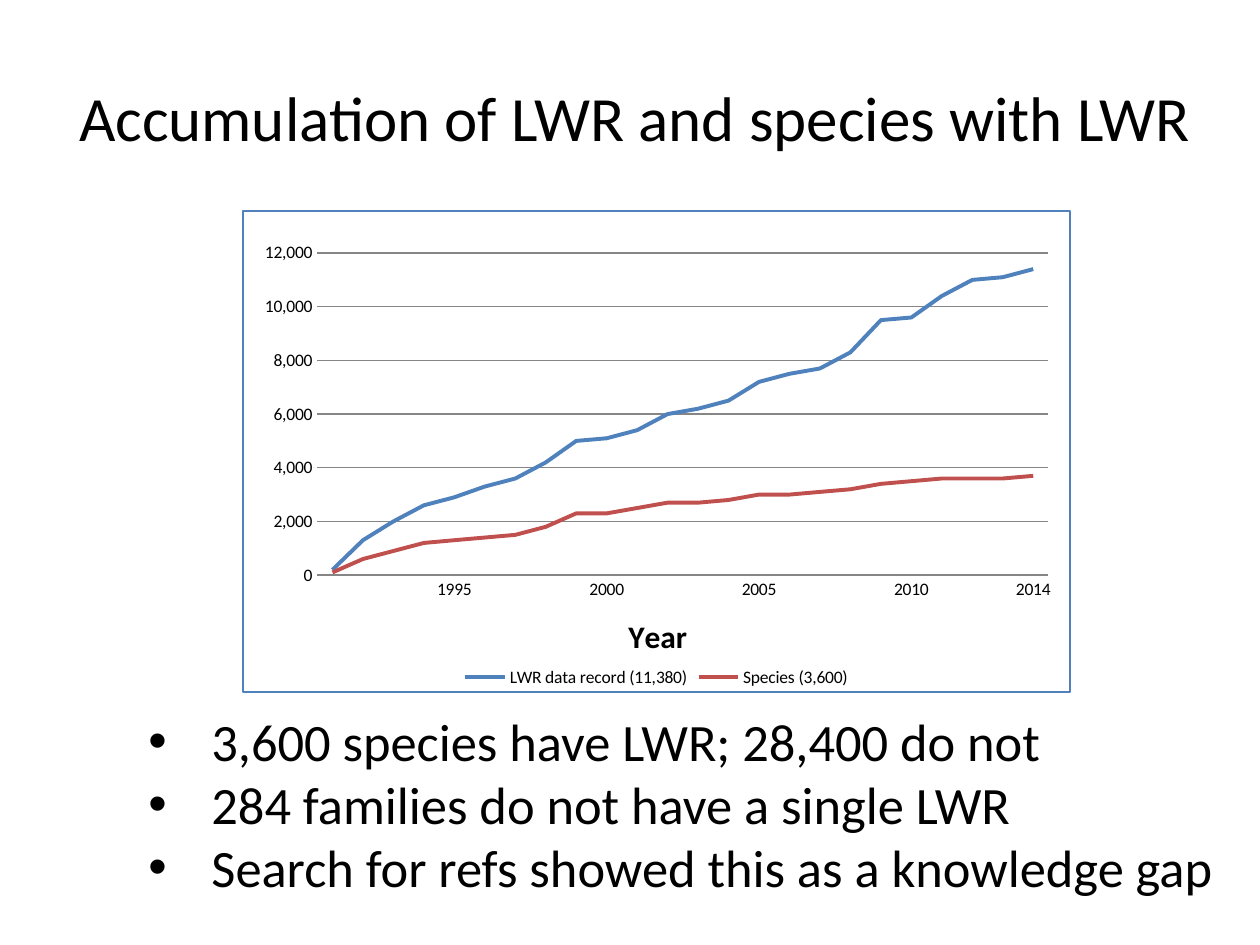
"""Build a slide charting the accumulation of LWR records and species."""
from dataclasses import dataclass

import lxml.etree
import pptx
import pptx.chart.data
import pptx.dml.color
import pptx.enum.chart
import pptx.enum.text
import pptx.oxml
import pptx.oxml.ns
import pptx.util
from pptx.util import Inches

FONT = "Calibri"
COLORS = {
    "text": "000000",
    "background": "FFFFFF",
    "records": "4F81BD",
    "species": "C0504D",
    "grid": "868686",
}
FIRST_YEAR, LAST_YEAR = 1991, 2014
PLOT_LAYOUT = {"x": 0.09, "y": 0.087, "w": 0.884, "h": 0.67}


@dataclass
class Box:
    left: float
    top: float
    width: float
    height: float

    def lengths(self) -> tuple:
        return tuple(Inches(n) for n in (self.left, self.top, self.width, self.height))


@dataclass
class Series:
    name: str
    color: str
    values: list[int]


SERIES = [
    Series("LWR data record (11,380)", "records",
           [200, 1300, 2000, 2600, 2900, 3300, 3600, 4200, 5000, 5100, 5400, 6000,
            6200, 6500, 7200, 7500, 7700, 8300, 9500, 9600, 10400, 11000, 11100, 11400]),
    Series("Species (3,600)", "species",
           [100, 600, 900, 1200, 1300, 1400, 1500, 1800, 2300, 2300, 2500, 2700,
            2700, 2800, 3000, 3000, 3100, 3200, 3400, 3500, 3600, 3600, 3600, 3700]),
]
FINDINGS = [
    "3,600 species have LWR; 28,400 do not",
    "284 families do not have a single LWR",
    "Search for refs showed this as a knowledge gap",
]


def rgb(name: str) -> pptx.dml.color.RGBColor:
    return pptx.dml.color.RGBColor.from_string(COLORS[name])


def style_font(font, size: float, bold: bool = False) -> None:
    font.name, font.size, font.bold = FONT, pptx.util.Pt(size), bold
    font.color.rgb = rgb("text")


def style_line(line, color: str, width: float) -> None:
    line.color.rgb = rgb(color)
    line.width = pptx.util.Pt(width)


def add_text(slide, box: Box, lines: list[str], size: float, wrap: bool):
    frame = slide.shapes.add_textbox(*box.lengths()).text_frame
    frame.word_wrap = wrap
    frame.text = "\n".join(lines)
    for paragraph in frame.paragraphs:
        style_font(paragraph.font, size)
    return frame


def add_bullet(paragraph) -> None:
    properties = paragraph._p.get_or_add_pPr()
    properties.set("marL", str(Inches(0.5)))
    properties.set("indent", str(Inches(-0.5)))
    namespace = pptx.oxml.ns.qn
    lxml.etree.SubElement(properties, namespace("a:buFont")).set("typeface", "Arial")
    lxml.etree.SubElement(properties, namespace("a:buChar")).set("char", "•")
    defaults = properties.find(namespace("a:defRPr"))
    if defaults is not None:
        properties.append(defaults)


def set_plot_layout(chart) -> None:
    plot_area = chart._chartSpace.chart.plotArea
    for layout in plot_area.findall(pptx.oxml.ns.qn("c:layout")):
        plot_area.remove(layout)
    modes = '<c:xMode val="edge"/><c:yMode val="edge"/>'
    sizes = "".join(f'<c:{key} val="{value}"/>' for key, value in PLOT_LAYOUT.items())
    plot_area.insert(0, pptx.oxml.parse_xml(
        f'<c:layout {pptx.oxml.ns.nsdecls("c")}><c:manualLayout>'
        f'<c:layoutTarget val="inner"/>{modes}{sizes}</c:manualLayout></c:layout>'))


def set_chart_border(chart) -> None:
    chart._chartSpace.chart.addnext(pptx.oxml.parse_xml(
        f'<c:spPr {pptx.oxml.ns.nsdecls("c", "a")}>'
        f'<a:solidFill><a:srgbClr val="{COLORS["background"]}"/></a:solidFill>'
        f'<a:ln w="{pptx.util.Pt(1)}"><a:solidFill>'
        f'<a:srgbClr val="{COLORS["records"]}"/></a:solidFill></a:ln></c:spPr>'))


def style_axes(chart) -> None:
    no_tick = pptx.enum.chart.XL_TICK_MARK.NONE
    for axis in (chart.category_axis, chart.value_axis):
        axis.major_tick_mark = axis.minor_tick_mark = no_tick
        style_font(axis.tick_labels.font, 10)
    years, counts = chart.category_axis, chart.value_axis
    style_line(years.format.line, "grid", 0.75)
    years.axis_title.text_frame.text = "Year"
    style_font(years.axis_title.text_frame.paragraphs[0].font, 18, bold=True)
    skip = pptx.oxml.parse_xml(
        f'<c:tickLblSkip {pptx.oxml.ns.nsdecls("c")} val="1"/>')
    years._element.find(pptx.oxml.ns.qn("c:noMultiLvlLbl")).addprevious(skip)
    counts.minimum_scale, counts.maximum_scale, counts.major_unit = 0, 12000, 2000
    counts.tick_labels.number_format = "#,##0"
    counts.tick_labels.number_format_is_linked = False
    counts.format.line.fill.background()
    style_line(counts.major_gridlines.format.line, "grid", 0.75)


def add_line_chart(slide, box: Box, series_list: list[Series]) -> None:
    data = pptx.chart.data.CategoryChartData(number_format="#,##0")
    data.categories = [
        str(year) if year % 5 == 0 or year == LAST_YEAR else ""
        for year in range(FIRST_YEAR, LAST_YEAR + 1)
    ]
    for series in series_list:
        data.add_series(series.name, series.values)
    chart = slide.shapes.add_chart(
        pptx.enum.chart.XL_CHART_TYPE.LINE, *box.lengths(), data).chart
    style_font(chart.font, 10)
    chart.has_title = False
    chart.has_legend = True
    chart.legend.position = pptx.enum.chart.XL_LEGEND_POSITION.BOTTOM
    chart.legend.include_in_layout = False
    style_font(chart.legend.font, 10)
    chart.plots[0].vary_by_categories = False
    for drawn, series in zip(chart.plots[0].series, series_list):
        drawn.smooth = False
        drawn.marker.style = pptx.enum.chart.XL_MARKER_STYLE.NONE
        style_line(drawn.format.line, series.color, 2.25)
    style_axes(chart)
    set_plot_layout(chart)
    set_chart_border(chart)


def main() -> None:
    presentation = pptx.Presentation()
    presentation.slide_width, presentation.slide_height = Inches(10), Inches(7.5)
    slide = presentation.slides.add_slide(presentation.slide_layouts[6])
    add_line_chart(slide, Box(1.92, 1.67, 6.58, 3.83), SERIES)
    title = add_text(slide, Box(0.25, 0.3, 9.58, 1.25),
                     ["Accumulation of LWR and species with LWR"], 36, wrap=True)
    title.vertical_anchor = pptx.enum.text.MSO_ANCHOR.MIDDLE
    title.paragraphs[0].alignment = pptx.enum.text.PP_ALIGN.CENTER
    findings = add_text(slide, Box(1.08, 5.58, 8.73, 1.62), FINDINGS, 30, wrap=False)
    findings.auto_size = pptx.enum.text.MSO_AUTO_SIZE.SHAPE_TO_FIT_TEXT
    for paragraph in findings.paragraphs:
        add_bullet(paragraph)
    presentation.save("out.pptx")


if __name__ == "__main__":
    main()
